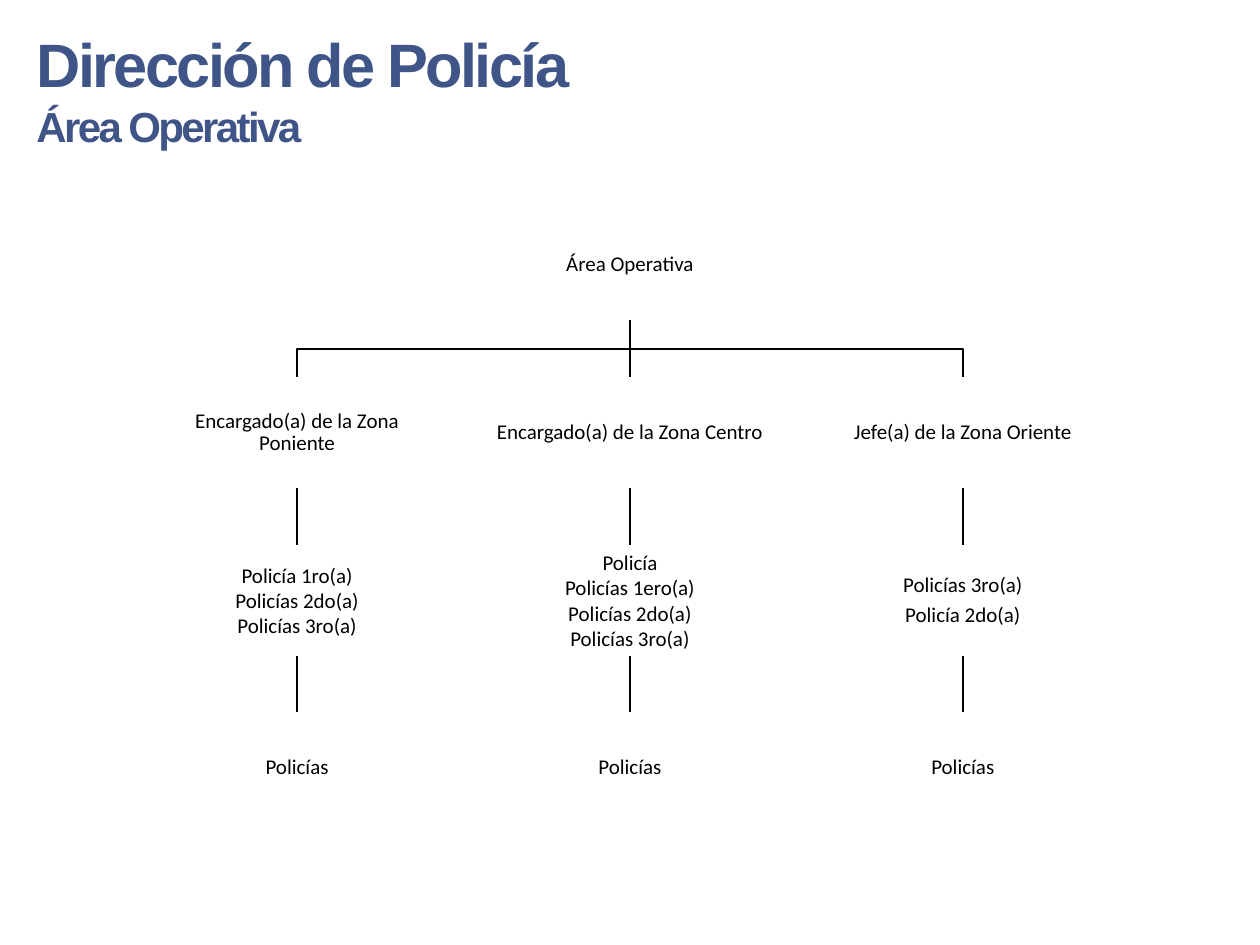
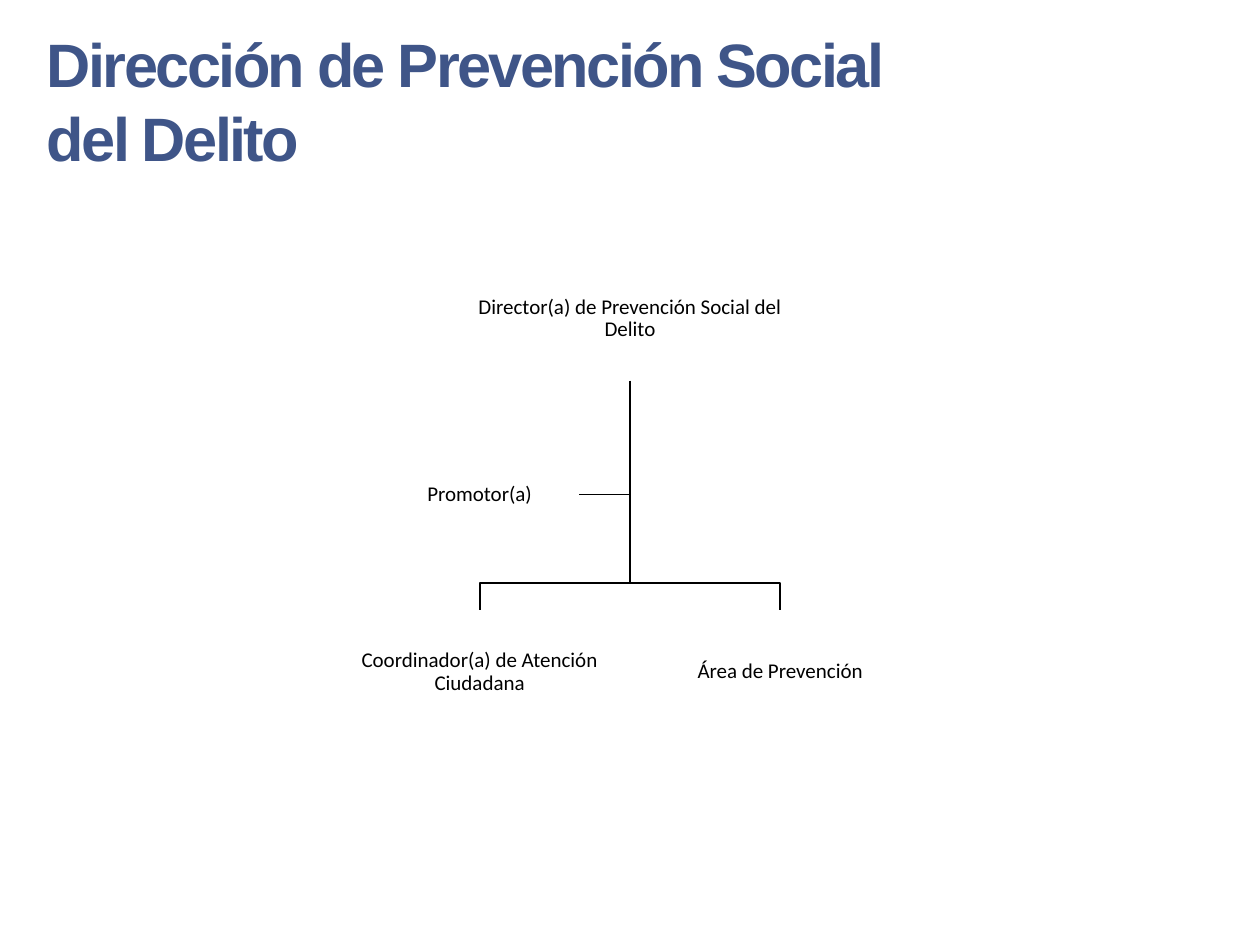
from dataclasses import dataclass

from lxml import etree
from pptx import Presentation
from pptx.dml.color import RGBColor
from pptx.enum.shapes import MSO_CONNECTOR, MSO_SHAPE
from pptx.enum.text import MSO_ANCHOR, MSO_AUTO_SIZE, PP_ALIGN
from pptx.oxml.ns import qn
from pptx.util import Cm, Pt

RECTANGLE = MSO_SHAPE.RECTANGLE
STRAIGHT = MSO_CONNECTOR.STRAIGHT
TOP, MIDDLE = MSO_ANCHOR.TOP, MSO_ANCHOR.MIDDLE
LEFT, CENTER = PP_ALIGN.LEFT, PP_ALIGN.CENTER
NO_AUTOFIT = MSO_AUTO_SIZE.NONE
TITLE_ONLY = 5
SIDE_TOP, SIDE_BOTTOM = 0, 2


@dataclass(frozen=True)
class Theme:
    title_color: RGBColor = RGBColor(0x3F, 0x55, 0x88)
    text_color: RGBColor = RGBColor(0, 0, 0)
    box_color: RGBColor = RGBColor(255, 255, 255)
    title_font: str = "Arial"
    body_font: str = "Calibri"
    title_size: Pt = Pt(35)
    subtitle_size: Pt = Pt(24)
    body_size: Pt = Pt(12)
    tracking: str = "-150"
    line_width: Pt = Pt(1)
    inset: Cm = Cm(0.03)


THEME = Theme()
PAGE_WIDTH, PAGE_HEIGHT = Cm(25.4), Cm(19.05)
AXIS = 12.7  # horizontal centre of both charts, in cm

# Paragraph formats of the chart boxes
SPACED = {"line_spacing": 0.9, "space_after": Pt(4.2)}
TIGHT = {"line_spacing": 0.9}
PLAIN = {}

ZONES = [
    ("Encargado(a) de la Zona Poniente",
     ["Policía 1ro(a)", "Policías 2do(a)", "Policías 3ro(a)"], PLAIN),
    ("Encargado(a) de la Zona Centro",
     ["Policía", "Policías 1ero(a)", "Policías 2do(a)", "Policías 3ro(a)"], PLAIN),
    ("Jefe(a) de la Zona Oriente",
     ["Policías 3ro(a)", "Policía 2do(a)"], SPACED),
]


def apply_format(target, values):
    for name, value in values.items():
        setattr(target, name, value)


def write_lines(frame, lines, para_format):
    """Put each line in its own paragraph and return the paragraphs."""
    frame.text = "\n".join(lines)
    for para in frame.paragraphs:
        apply_format(para, para_format)
    return frame.paragraphs


def add_title_page(deck, left, height, lines):
    page = deck.slides.add_slide(deck.slide_layouts[TITLE_ONLY])
    title = page.shapes.title
    apply_format(title, {"left": Cm(left), "top": Cm(0.41),
                         "width": Cm(18.95), "height": Cm(height)})
    frame = title.text_frame
    apply_format(frame, {"word_wrap": True, "vertical_anchor": TOP,
                         "auto_size": NO_AUTOFIT})
    paras = write_lines(frame, lines, {"alignment": LEFT})
    for para, size in zip(paras, (THEME.title_size, THEME.subtitle_size)):
        span = para.runs[0]
        apply_format(span.font, {"name": THEME.title_font, "size": size, "bold": True})
        span.font.color.rgb = THEME.title_color
        span.font._element.set("spc", THEME.tracking)
    return page


def add_box(page, center, top, size, lines, para_format):
    """Add a borderless box, centred on the given x; lengths in cm."""
    width, height = size
    box = page.shapes.add_shape(RECTANGLE, Cm(center - width / 2), Cm(top),
                                Cm(width), Cm(height))
    box.shadow.inherit = False
    box.fill.solid()
    box.fill.fore_color.rgb = THEME.box_color
    box.line.fill.background()
    frame = box.text_frame
    apply_format(frame, {"word_wrap": True, "vertical_anchor": MIDDLE})
    apply_format(frame, {f"margin_{side}": THEME.inset
                         for side in ("left", "top", "right", "bottom")})
    for para in write_lines(frame, lines, {"alignment": CENTER, **para_format}):
        apply_format(para.font, {"name": THEME.body_font, "size": THEME.body_size})
        para.font.color.rgb = THEME.text_color
    return box


def style_line(line):
    line.width = THEME.line_width
    line.color.rgb = THEME.text_color


def add_link(page, upper, lower):
    """Join two boxes of one column with a straight connector."""
    link = page.shapes.add_connector(STRAIGHT, 0, 0, 0, 0)
    link.begin_connect(upper, SIDE_BOTTOM)
    link.end_connect(lower, SIDE_TOP)
    style_line(link.line)
    etree.SubElement(link._element.spPr, qn("a:effectLst"))


def middle_of(box):
    return box.left + box.width // 2


def add_polyline(page, start, *points):
    builder = page.shapes.build_freeform(*start)
    builder.add_line_segments(points, close=False)
    branch = builder.convert_to_shape()
    branch.shadow.inherit = False
    branch.fill.background()
    style_line(branch.line)


def add_branch(page, parent, child, bend):
    """Draw a stepped line down from parent to child, turning at bend."""
    start_x, end_x = middle_of(parent), middle_of(child)
    add_polyline(page, (start_x, parent.top + parent.height),
                 (start_x, bend), (end_x, bend), (end_x, child.top))


def add_assistant_branch(page, parent, assistant):
    """Draw a line down from parent and left into the assistant's side."""
    axis = middle_of(parent)
    level = assistant.top + assistant.height // 2
    add_polyline(page, (axis, parent.top + parent.height),
                 (axis, level), (assistant.left + assistant.width, level))


def build_police_page(deck):
    page = add_title_page(deck, 0.48, 2.77, ["Dirección de Policía", "Área Operativa"])
    size, first_top, row_step, column_step = (5.56, 2.24), 4.22, 3.38, 6.71
    area = add_box(page, AXIS, first_top, size, ["Área Operativa"], SPACED)

    # One column for each zone: head, ranks, officers
    for index, (head, ranks, rank_format) in enumerate(ZONES):
        center = AXIS + (index - 1) * column_step
        levels = [([head], SPACED), (ranks, rank_format), (["Policías"], SPACED)]
        boxes = [add_box(page, center, first_top + row * row_step, size, *level)
                 for row, level in enumerate(levels, start=1)]
        for upper, lower in zip(boxes, boxes[1:]):
            add_link(page, upper, lower)
        if center == AXIS:
            add_link(page, area, boxes[0])
        else:
            bend = (area.top + area.height + boxes[0].top) // 2
            add_branch(page, area, boxes[0], bend)


def build_prevention_page(deck):
    page = add_title_page(deck, 0.69, 3.33, ["Dirección de Prevención Social del Delito"])
    offset, unit_size = 3.03, (5, 2.51)
    director = add_box(page, AXIS, 5.17, (6.96, 2.51),
                       ["Director(a) de Prevención Social del Delito"], TIGHT)
    promoter = add_box(page, AXIS - offset, 8.97, (4, 2), ["Promotor(a)"], TIGHT)
    add_assistant_branch(page, director, promoter)

    # Units below the director
    units = [(-offset, ["Coordinador(a) de Atención", "Ciudadana"]),
             (offset, ["Área de Prevención"])]
    for shift, lines in units:
        unit = add_box(page, AXIS + shift, 12.29, unit_size, lines, TIGHT)
        add_branch(page, director, unit, Cm(11.76))


def main():
    deck = Presentation()
    deck.slide_width, deck.slide_height = PAGE_WIDTH, PAGE_HEIGHT
    build_police_page(deck)
    build_prevention_page(deck)
    deck.save("out.pptx")


if __name__ == "__main__":
    main()
